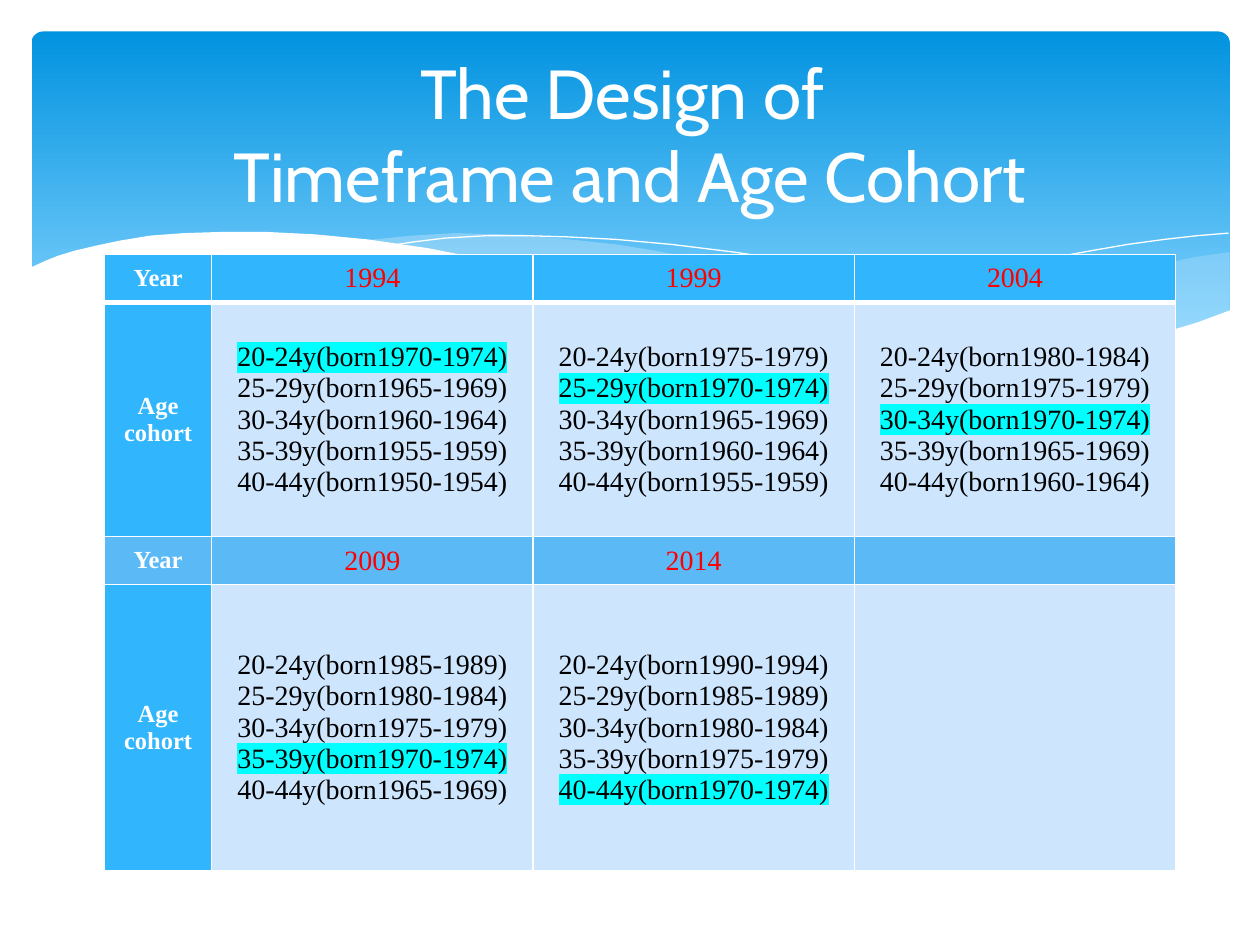
from lxml import etree
from pptx import Presentation
from pptx.dml.color import RGBColor
from pptx.enum import shapes, text
from pptx.oxml.ns import qn
from pptx.util import Inches, Pt

WHITE = RGBColor(0xFF, 0xFF, 0xFF)
BLACK = RGBColor(0x00, 0x00, 0x00)
RED = RGBColor(0xFF, 0x00, 0x00)
DEEP = RGBColor(0x02, 0x93, 0xE0)
SKY = RGBColor(0x83, 0xD3, 0xFE)
MIST = RGBColor(0xC6, 0xE7, 0xFC)
BLUE = RGBColor(0x31, 0xB6, 0xFD)
MID = RGBColor(0x5B, 0xBA, 0xF6)
PALE = RGBColor(0xCE, 0xE5, 0xFE)
CYAN = RGBColor(0x00, 0xFF, 0xFF)

SERIF = "Times New Roman"
BORN = 1970  # first birth year of the cohort that is followed
YEARS = [[1994, 1999, 2004], [2009, 2014, None]]

# Wave outlines, in inches
RIGHT = [(9.76, 2), (9.48, 2.04), (9.21, 2.1), (8.91, 2.16), (8.61, 2.23),
         (8.05, 2.37), (7.53, 2.48), (7.06, 2.57), (6.61, 2.65), (6.91, 2.69),
         (7.19, 2.72), (7.45, 2.75), (7.81, 2.77), (8.14, 2.78), (8.44, 2.77),
         (8.72, 2.74), (8.97, 2.7), (9.21, 2.65), (9.42, 2.59), (9.63, 2.52),
         (9.76, 2.47)]
MIDDLE = [(8.93, 2.73), (8.66, 2.69), (8.07, 2.6), (7.41, 2.47), (6.68, 2.31),
          (6.29, 2.22), (5.98, 2.14), (5.69, 2.08), (5.41, 2.03), (5.14, 1.98),
          (4.89, 1.94), (4.42, 1.89), (3.99, 1.86), (3.61, 1.85), (3.28, 1.87),
          (2.86, 1.91), (3.23, 1.96), (3.62, 2.03), (4.04, 2.11), (4.49, 2.22),
          (5.3, 2.4), (5.84, 2.52), (6.34, 2.61), (6.8, 2.68), (7.22, 2.74),
          (7.61, 2.77), (7.96, 2.78), (8.28, 2.78), (8.57, 2.77)]
LONG = [(3.09, 1.95), (3.28, 1.92), (3.53, 1.89), (3.87, 1.87), (4.16, 1.87),
        (4.5, 1.88), (4.89, 1.9), (5.33, 1.94), (5.82, 2), (6.36, 2.08),
        (6.95, 2.19), (7.6, 2.33), (8.31, 2.51), (9.07, 2.72)]
SHORT = [(6.13, 2.57), (6.53, 2.46), (6.95, 2.35), (7.48, 2.23), (8.06, 2.1),
         (8.66, 1.99), (8.95, 1.94), (9.24, 1.9), (9.51, 1.87), (9.75, 1.85)]
FRONT = [(9.77, 2.46), (9.5, 2.56), (9.2, 2.65), (8.87, 2.71), (8.5, 2.75),
         (8.09, 2.77), (7.61, 2.75), (7.08, 2.7), (6.48, 2.62), (5.79, 2.5),
         (5.03, 2.33), (4.47, 2.2), (3.91, 2.07), (3.4, 1.97), (2.92, 1.9),
         (2.5, 1.86), (2.11, 1.84), (1.77, 1.84), (1.46, 1.85), (1.19, 1.87),
         (0.95, 1.91), (0.76, 1.95), (0.59, 1.99), (0.46, 2.03), (0.36, 2.07),
         (0.23, 2.13), (0.23, 3.29), (9.77, 3.29)]


def add_band(slide):
    band = slide.shapes.add_shape(
        shapes.MSO_SHAPE.ROUNDED_RECTANGLE,
        Inches(0.25), Inches(0.25), Inches(9.51), Inches(2.7))
    band.adjustments[0] = 0.034
    band.shadow.inherit = False
    band.line.fill.background()
    band.fill.gradient()
    band.fill.gradient_angle = 270
    for stop, place, color in zip(band.fill.gradient_stops, (0, 0.9), (DEEP, SKY)):
        stop.position = place
        stop.color.rgb = color


def add_path(slide, points, closed):
    spots = [(Inches(x), Inches(y)) for x, y in points]
    pen = slide.shapes.build_freeform(*spots[0], scale=1.0)
    pen.add_line_segments(spots[1:], close=closed)
    shape = pen.convert_to_shape()
    shape.shadow.inherit = False
    return shape


def add_wave(slide, points, color, alpha=100):
    wave = add_path(slide, points, True)
    wave.line.fill.background()
    wave.fill.solid()
    wave.fill.fore_color.rgb = color
    if alpha < 100:
        tone = next(wave._element.spPr.iter(qn("a:srgbClr")))
        etree.SubElement(tone, qn("a:alpha"), val=str(alpha * 1000))


def add_curve(slide, points):
    curve = add_path(slide, points, False)
    curve.fill.background()
    curve.line.color.rgb = WHITE
    curve.line.width = Pt(0)


def add_edge(cell, side, width):
    edge = etree.SubElement(cell._tc.get_or_add_tcPr(), qn("a:ln" + side),
                            w=str(Pt(width)))
    fill = etree.SubElement(edge, qn("a:solidFill"))
    etree.SubElement(fill, qn("a:srgbClr"), val=str(WHITE))


def mark(run):
    light = etree.SubElement(run._r.get_or_add_rPr(), qn("a:highlight"))
    etree.SubElement(light, qn("a:srgbClr"), val=str(CYAN))


def style(par, size, color, bold=False, name=SERIF):
    par.alignment = text.PP_ALIGN.CENTER
    font = par.font
    font.size, font.bold, font.name = Pt(size), bold, name
    font.color.rgb = color


def fill_cell(cell, lines, back, size, color, bold=False):
    cell.fill.solid()
    cell.fill.fore_color.rgb = back
    cell.vertical_anchor = text.MSO_ANCHOR.MIDDLE
    cell.margin_left = cell.margin_right = Inches(0.07)
    cell.margin_top = cell.margin_bottom = 0
    cell.text = "\n".join(lines)
    for par in cell.text_frame.paragraphs:
        style(par, size, color, bold)
        for run in par.runs:
            if f"born{BORN}-" in run.text:
                mark(run)


def list_ages(year):
    return [f"{age}-{age + 4}y(born{year - age - 4}-{year - age})"
            for age in range(20, 45, 5)]


def add_grid(slide):
    frame = slide.shapes.add_table(4, 4, Inches(0.83), Inches(2.02),
                                   Inches(8.5), Inches(4.89))
    grid = frame.table
    grid.first_row = grid.horz_banding = False
    for col, width in zip(grid.columns, (0.85, 2.55, 2.55, 2.55)):
        col.width = Inches(width)
    for row, height in zip(grid.rows, (0.38, 1.86, 0.38, 2.27)):
        row.height = Inches(height)

    # Borders, with a heavy rule under the first row
    for r, row in enumerate(grid.rows):
        for cell in row.cells:
            for side in "LRTB":
                heavy = (r, side) in ((0, "B"), (1, "T"))
                add_edge(cell, side, 3 if heavy else 1)

    # Each band is a row of years above a row of age groups
    for band, (years, back) in enumerate(zip(YEARS, (BLUE, MID))):
        top, low = 2 * band, 2 * band + 1
        fill_cell(grid.cell(top, 0), ["Year"], back, 14, WHITE, True)
        fill_cell(grid.cell(low, 0), ["Age cohort"], BLUE, 14, WHITE, True)
        for c, year in enumerate(years, 1):
            head = [str(year)] if year else []
            ages = list_ages(year) if year else []
            fill_cell(grid.cell(top, c), head, back, 16, RED)
            fill_cell(grid.cell(low, c), ages, PALE, 16, BLACK)


def add_title(slide):
    box = slide.shapes.add_textbox(Inches(0.5), Inches(0.37), Inches(9), Inches(1.37))
    frame = box.text_frame
    frame.word_wrap = True
    frame.vertical_anchor = text.MSO_ANCHOR.MIDDLE
    frame.text = "The Design of \vTimeframe and Age Cohort"
    style(frame.paragraphs[0], 39.6, WHITE, name="Cabin")


def main():
    deck = Presentation()
    deck.slide_width, deck.slide_height = Inches(10), Inches(7.5)
    slide = deck.slides.add_slide(deck.slide_layouts[6])

    # Banner with waves
    add_band(slide)
    add_wave(slide, RIGHT, MIST, 29)
    add_wave(slide, MIDDLE, MIST, 40)
    add_curve(slide, LONG)
    add_curve(slide, SHORT)
    add_wave(slide, FRONT, WHITE)

    # Content
    add_grid(slide)
    add_title(slide)
    deck.save("out.pptx")


if __name__ == "__main__":
    main()
